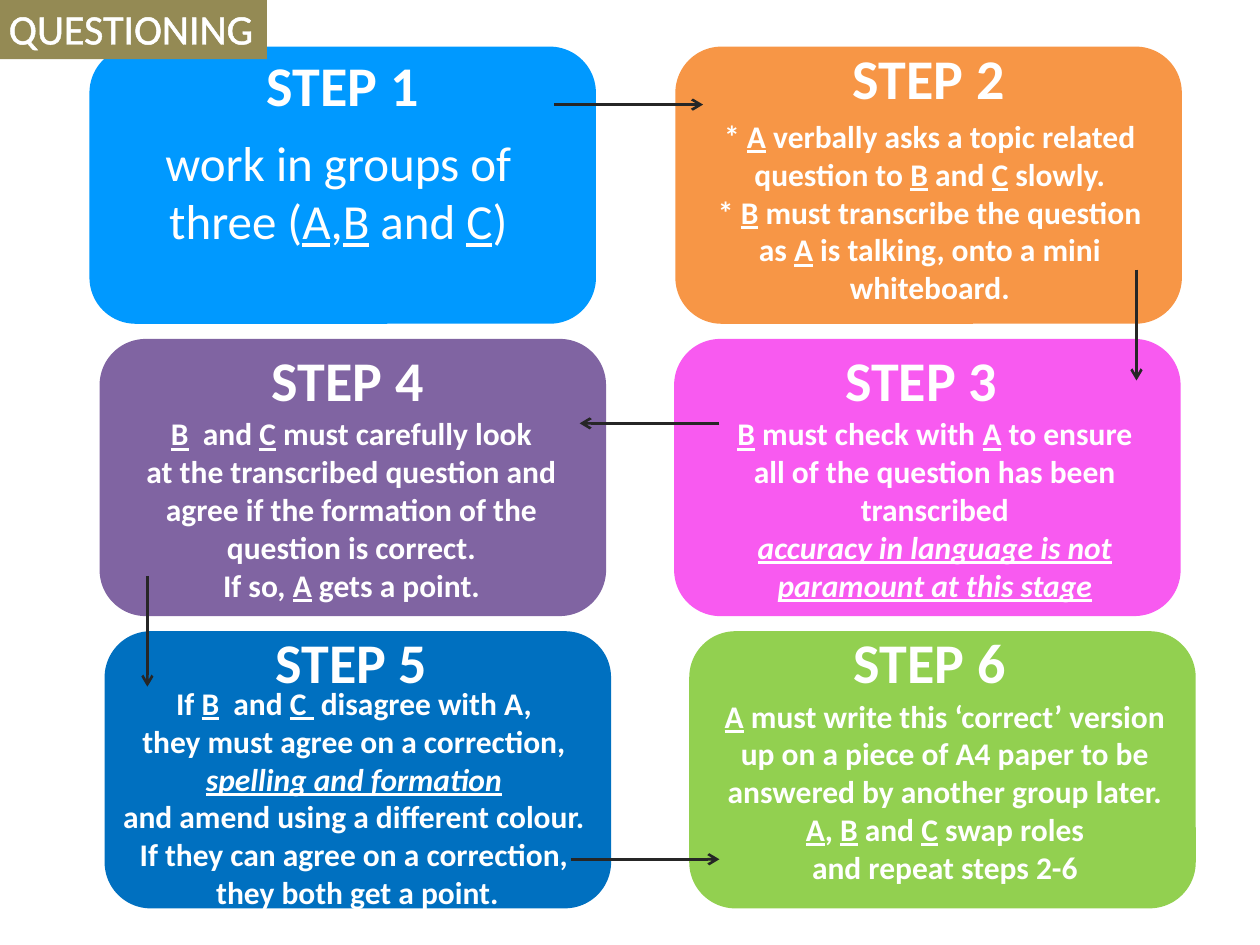
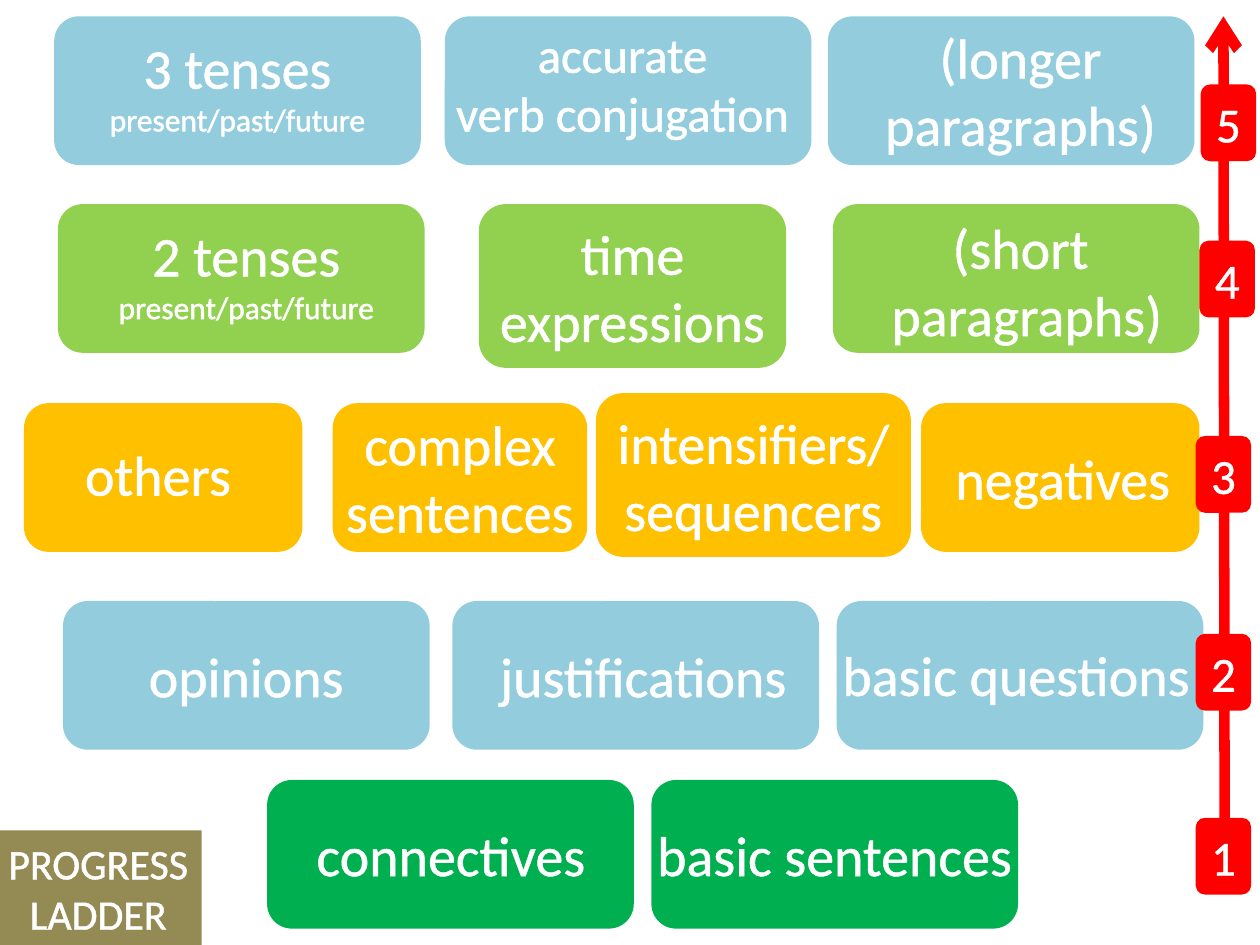
from lxml import etree
from pptx import Presentation
from pptx.dml.color import RGBColor
from pptx.enum.shapes import MSO_CONNECTOR, MSO_SHAPE
from pptx.enum.text import MSO_ANCHOR, MSO_AUTO_SIZE, PP_ALIGN
from pptx.oxml.ns import qn
from pptx.util import Inches, Pt

RECT = MSO_SHAPE.RECTANGLE
ROUNDED = MSO_SHAPE.ROUNDED_RECTANGLE
STRAIGHT = MSO_CONNECTOR.STRAIGHT
CENTER = PP_ALIGN.CENTER
MIDDLE = MSO_ANCHOR.MIDDLE
GROW = MSO_AUTO_SIZE.SHAPE_TO_FIT_TEXT

# Slide and its grid of 100 columns by 75 rows
SLIDE_W, SLIDE_H = Inches(10), Inches(7.5)
COLUMN, ROW = SLIDE_W / 100, SLIDE_H / 75
LINE_ROWS = 0.17   # rows that one point of text takes in a line
INSET_ROWS = 1     # top and bottom inset of a text box

FONT = "Calibri"
WHITE = RGBColor(0xFF, 0xFF, 0xFF)
OLIVE = RGBColor(0x94, 0x8A, 0x54)
INK = RGBColor(0x26, 0x26, 0x26)
SKY = RGBColor(0x00, 0x99, 0xFF)
ORANGE = RGBColor(0xF7, 0x96, 0x46)
PINK = RGBColor(0xF8, 0x5A, 0xF0)
PURPLE = RGBColor(0x80, 0x64, 0xA2)
BLUE = RGBColor(0x00, 0x70, 0xC0)
LIME = RGBColor(0x92, 0xD0, 0x50)
PALE_BLUE = RGBColor(0x93, 0xCD, 0xDD)
AMBER = RGBColor(0xFF, 0xC0, 0x00)
GREEN = RGBColor(0x00, 0xB0, 0x50)
RED = RGBColor(0xFF, 0x00, 0x00)

# Text formats; "outline" is the width in EMU of a white letter outline
STEP_TITLE = {"size": 32, "bold": True}
STEP_BODY = {"size": 18, "bold": True}
STEP_INTRO = {"size": 28}
OUTLINE = 18415
TAG_TEXT = {"size": 24, "outline": OUTLINE}
TILE_TEXT = {"size": 32, "outline": OUTLINE}
TILE_MEDIUM = {"size": 28, "outline": OUTLINE}
TILE_SMALL = {"size": 18, "outline": OUTLINE}

# Steps: card column and row, colour, title offset, body offset, body width,
# body format, body lines (_underlined_, ~underlined italic~)
CARD_W, CARD_H = 40.2, 22
TITLE_W, BODY_W = 14.2, 50
STEPS = [
    (7.1, 3.7, SKY, (13, -0.2), (4.6, 6.3), 30.3, STEP_INTRO,
     ["work in groups of", "three (_A_,_B_ and _C_)"]),
    (53.6, 3.7, ORANGE, (13, -0.7), (-4.8, 5.1), BODY_W, STEP_BODY,
     ["* _A_ verbally asks a topic related",
      "question to _B_ and _C_ slowly.",
      "* _B_ must transcribe the question",
      "as _A_ is talking, onto a mini",
      "whiteboard."]),
    (53.5, 26.9, PINK, (12.5, 0), (-4.3, 5.5), BODY_W, STEP_BODY,
     ["_B_ must check with _A_ to ensure",
      "all of the question has been",
      "transcribed",
      "~accuracy in language is not~",
      "~paramount at this stage~"]),
    (7.9, 26.9, PURPLE, (12.6, 0), (-5, 5.5), BODY_W, STEP_BODY,
     ["_B_  and _C_ must carefully look",
      "at the transcribed question and",
      "agree if the formation of the",
      "question is correct.",
      "If so, _A_ gets a point."]),
    (8.3, 50.1, BLUE, (12.5, -0.8), (-5.2, 3.7), BODY_W, STEP_BODY,
     ["If _B_  and _C _ disagree with A,",
      "they must agree on a correction,",
      "~spelling and formation~",
      "and amend using a different colour.",
      "If they can agree on a correction,",
      " they both get a point."]),
    (54.7, 50.1, LIME, (12, -0.8), (-4.7, 4.7), BODY_W, STEP_BODY,
     ["_A_ must write this ‘correct’ version",
      "up on a piece of A4 paper to be",
      "answered by another group later.",
      "_A_, _B_ and _C_ swap roles",
      "and repeat steps 2-6"]),
]
STEP_ARROWS = [
    ((44, 8.3), (55.8, 8.3)),
    ((90.2, 21.4), (90.2, 30.2)),
    ((57.1, 33.6), (46, 33.6)),
    ((11.7, 45.7), (11.7, 54.5)),
    ((45.3, 68.2), (57.1, 68.2)),
]

# Ladder rungs: top row, colour, tiles. A tile has a column, a width, its lines
# and its label's offset and width; without a label box the tile holds the text.
TILE_W, TILE_H, TALL_H = 29.1, 11.8, 13
TENSES = [TILE_TEXT, TILE_SMALL]
RUNGS = [
    (1.3, PALE_BLUE, [
        (4.3, TILE_W, ["3 tenses", "present/past/future"], TENSES, (3.3, 0.8, 22.5)),
        (35.3, TILE_W, ["accurate", "verb conjugation"], [TILE_MEDIUM] * 2, (-0.3, 0.1, 28.8)),
        (65.7, TILE_W, ["(longer", "paragraphs)"], [TILE_TEXT] * 2, (3.4, 0, 23.8))]),
    (16.2, LIME, [
        (4.6, TILE_W, ["2 tenses", "present/past/future"], TENSES, (3.7, 0.8, 22.5)),
        (38, 24.4, ["time", "expressions"], [TILE_TEXT] * 2, None),
        (66.1, TILE_W, ["(short ", "paragraphs)"], [TILE_TEXT] * 2, (3.5, 0.2, 23.8))]),
    (32, AMBER, [
        (1.9, 22.1, ["others"], [TILE_TEXT], (3.8, 2.4, 13.7)),
        (26.4, 20.2, ["complex", "sentences"], [TILE_TEXT] * 2, (0, 0, 20.2)),
        (73.1, 22.1, ["negatives"], [TILE_TEXT], (1.6, 2.7, 19.3))]),
    (31.2, AMBER, [
        (47.3, 25, ["intensifiers/", "sequencers"], [TILE_TEXT] * 2, None)]),
    (47.7, PALE_BLUE, [
        (5, TILE_W, ["opinions"], [TILE_TEXT], (5.7, 2.7, 17.7)),
        (35.9, TILE_W, ["justifications"], [TILE_TEXT], (2.6, 2.7, 25.1)),
        (66.4, TILE_W, ["basic questions"], [TILE_TEXT], (-0.7, 2.6, 29.9))]),
    (61.9, GREEN, [
        (21.2, TILE_W, ["connectives"], [TILE_TEXT], (2.8, 2.7, 23.6)),
        (51.7, TILE_W, ["basic sentences"], [TILE_TEXT], (-0.7, 2.7, 30.5))]),
]
BADGE_W, BADGE_H = 4.4, 6.1
BADGES = [("1", 94.9, 64.9), ("2", 94.9, 50.3), ("3", 94.9, 34.6),
          ("4", 95.2, 19.1), ("5", 95.3, 6.7)]


def on_grid(column, row):
    return round(column * COLUMN), round(row * ROW)


def add_panel(slide, kind, box, colour):
    """Plain filled shape on a box of grid units."""
    panel = slide.shapes.add_shape(kind, *on_grid(*box[:2]), *on_grid(*box[2:]))
    panel.shadow.inherit = False
    panel.fill.solid()
    panel.fill.fore_color.rgb = colour
    panel.line.fill.background()
    return panel


def add_run(paragraph, text, style, emphasis):
    run = paragraph.add_run()
    run.text = text
    font = run.font
    values = {"name": FONT, "size": Pt(style["size"]),
              "bold": style.get("bold", False), **emphasis}
    for attribute, value in values.items():
        setattr(font, attribute, value)
    font.color.rgb = WHITE
    if "outline" in style:
        outline = etree.Element(qn("a:ln"), w=str(style["outline"]))
        fill = etree.SubElement(outline, qn("a:solidFill"))
        etree.SubElement(fill, qn("a:srgbClr"), val=str(WHITE))
        run._r.get_or_add_rPr().insert(0, outline)


def write_lines(frame, lines, styles, wrap=False):
    """Centred paragraphs; _ and ~ switch underline and underlined italic."""
    frame.word_wrap = wrap
    frame.auto_size = GROW
    for index, (line, style) in enumerate(zip(lines, styles)):
        paragraph = frame.add_paragraph() if index else frame.paragraphs[0]
        paragraph.alignment = CENTER
        italic = "~" in line
        for part, text in enumerate(line.replace("~", "_").split("_")):
            if text:
                marked = part % 2 == 1
                add_run(paragraph, text, style,
                        {"underline": marked, "italic": marked and italic})


def add_label(slide, column, row, width, lines, styles, wrap=False):
    """Text box whose height follows from its lines."""
    height = INSET_ROWS + sum(style["size"] * LINE_ROWS for style in styles)
    label = slide.shapes.add_textbox(*on_grid(column, row), *on_grid(width, height))
    write_lines(label.text_frame, lines, styles, wrap)


def add_text_panel(slide, kind, box, colour, lines, styles):
    panel = add_panel(slide, kind, box, colour)
    panel.text_frame.vertical_anchor = MIDDLE
    write_lines(panel.text_frame, lines, styles)


def add_arrow(slide, start, end, colour, width):
    arrow = slide.shapes.add_connector(STRAIGHT, *on_grid(*start), *on_grid(*end))
    arrow.line.color.rgb = colour
    arrow.line.width = Pt(width)
    etree.SubElement(arrow.line._get_or_add_ln(), qn("a:tailEnd"), type="arrow")
    etree.SubElement(arrow._element.spPr, qn("a:effectLst"))


def add_tag(slide, box, lines):
    """Olive name tag at the edge of a slide."""
    add_text_panel(slide, RECT, box, OLIVE, lines, [TAG_TEXT] * len(lines))


def add_step(slide, box, number, colour, title_at, body_at, body_w, style, lines):
    column, row = box[:2]
    add_panel(slide, ROUNDED, box, colour)
    add_label(slide, column + title_at[0], row + title_at[1], TITLE_W,
              [f"STEP {number}"], [STEP_TITLE])
    add_label(slide, column + body_at[0], row + body_at[1], body_w,
              lines, [style] * len(lines), wrap=body_w == BODY_W)


def add_tile(slide, box, colour, lines, styles, label_box):
    if label_box is None:
        add_text_panel(slide, ROUNDED, box, colour, lines, styles)
        return
    add_panel(slide, ROUNDED, box, colour)
    dx, dy, width = label_box
    add_label(slide, box[0] + dx, box[1] + dy, width, lines, styles)


def build_questioning(slide):
    # Six steps
    for number, (column, row, *content) in enumerate(STEPS, start=1):
        add_step(slide, (column, row, CARD_W, CARD_H), number, *content)
    # Lone full stop in step 6
    add_label(slide, 48.8, 54.8, BODY_W, ["."], [STEP_BODY], wrap=True)
    # Way from step to step
    for start, end in STEP_ARROWS:
        add_arrow(slide, start, end, INK, 1.5)
    add_tag(slide, (-0.4, -0.3, 21.6, 5), ["QUESTIONING"])


def build_ladder(slide):
    # Rungs of skills
    for row, colour, tiles in RUNGS:
        for column, width, lines, styles, label_box in tiles:
            height = TILE_H if label_box else TALL_H
            add_tile(slide, (column, row, width, height), colour,
                     lines, styles, label_box)
    # Level arrow with its badges
    add_arrow(slide, (97.2, 69), (97.1, 1.3), RED, 6)
    for level, column, row in BADGES:
        add_text_panel(slide, ROUNDED, (column, row, BADGE_W, BADGE_H), RED,
                       [level], [TILE_MEDIUM])
    add_tag(slide, (-0.4, 65.9, 16.4, 9.1), ["PROGRESS", "LADDER"])


def main():
    deck = Presentation()
    deck.slide_width, deck.slide_height = SLIDE_W, SLIDE_H
    blank = deck.slide_layouts[6]
    for build in (build_questioning, build_ladder):
        build(deck.slides.add_slide(blank))
    deck.save("out.pptx")


if __name__ == "__main__":
    main()
